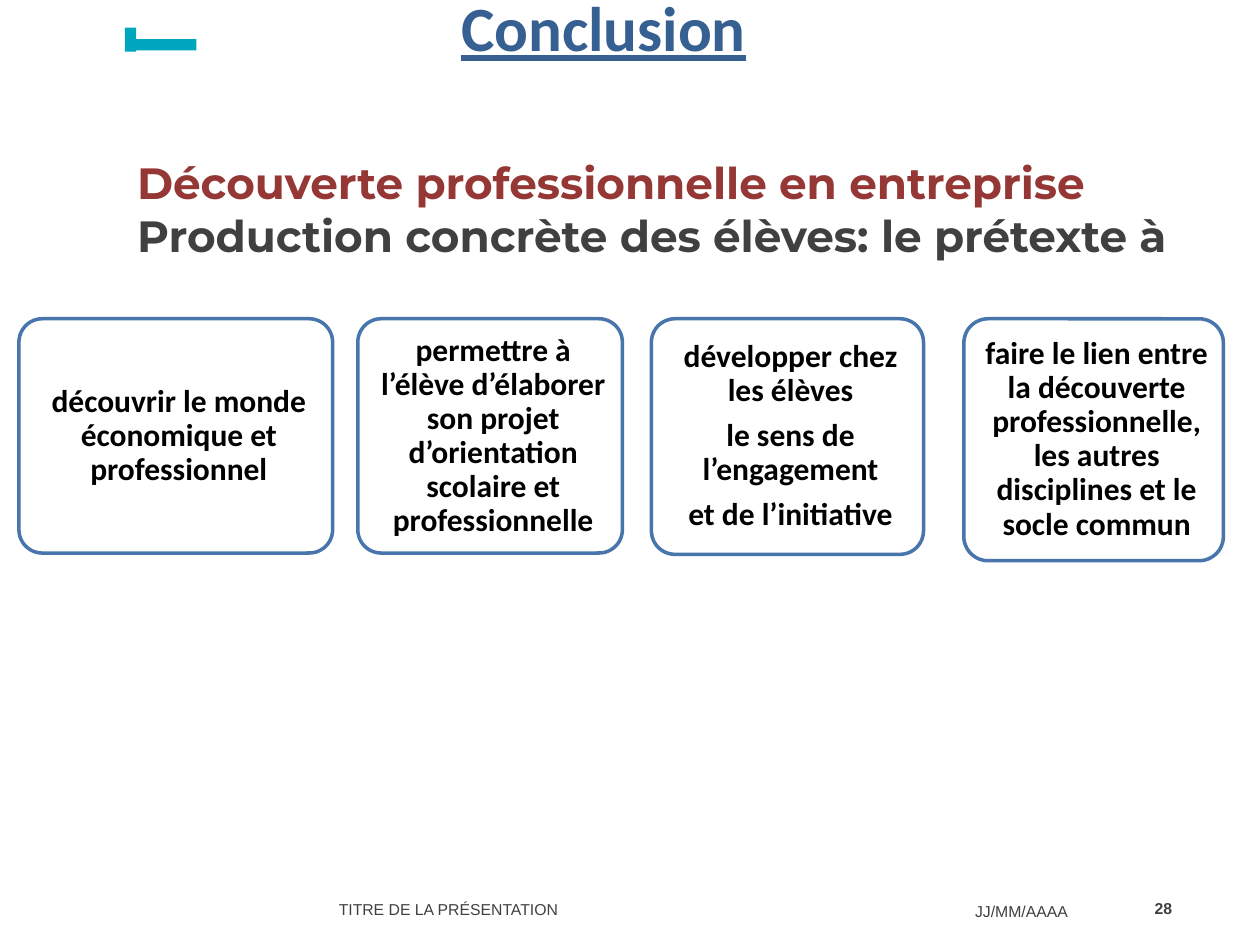
from pptx import Presentation
from pptx.dml.color import RGBColor
from pptx.enum.shapes import MSO_SHAPE
from pptx.enum.text import MSO_ANCHOR, PP_ALIGN
from pptx.util import Inches, Pt

RECTANGLE, ROUNDED = MSO_SHAPE.RECTANGLE, MSO_SHAPE.ROUNDED_RECTANGLE
TOP, MIDDLE = MSO_ANCHOR.TOP, MSO_ANCHOR.MIDDLE
LEFT, CENTER, RIGHT = PP_ALIGN.LEFT, PP_ALIGN.CENTER, PP_ALIGN.RIGHT

WHITE = RGBColor(0xFF, 0xFF, 0xFF)
BLACK = RGBColor(0x00, 0x00, 0x00)
GREY = RGBColor(0x40, 0x40, 0x40)
RED = RGBColor(0x95, 0x37, 0x35)
TEAL = RGBColor(0x00, 0xA6, 0xBE)
BORDER_BLUE = RGBColor(0x48, 0x75, 0xAC)
TITLE_BLUE = RGBColor(0x37, 0x60, 0x92)

COLUMNS, ROWS = 100, 75
CARD_ROW = 25.3
CARDS = [
    (1.5, 24.9, 18.6, ["découvrir le monde économique et professionnel"]),
    (28.4, 21, 18.6, ["permettre à l’élève d’élaborer son projet d’orientation "
                      "scolaire et professionnelle"]),
    (51.7, 21.6, 18.7, ["développer chez les élèves", "le sens de l’engagement",
                        "et de l’initiative"]),
    (76.5, 20.6, 19.2, ["faire le lien entre la découverte professionnelle, "
                        "les autres disciplines et le socle commun"]),
]


class ConclusionSlide:
    """Draws styled elements on a slide divided into a grid of columns and rows."""

    def __init__(self, presentation):
        self.column = presentation.slide_width / COLUMNS
        self.row = presentation.slide_height / ROWS
        self.slide = presentation.slides.add_slide(presentation.slide_layouts[6])

    def place(self, left, top, width, height):
        return (round(left * self.column), round(top * self.row),
                round(width * self.column), round(height * self.row))

    def style(self, paragraph, font, size, color, bold=False, align=LEFT):
        paragraph.alignment = align
        paragraph.font.name = font
        paragraph.font.size = Pt(size)
        paragraph.font.bold = bold
        paragraph.font.color.rgb = color

    def label(self, area, words, font, size, color, bold=False, align=LEFT,
              anchor=MIDDLE, inset_top=0.05):
        frame = self.slide.shapes.add_textbox(*self.place(*area)).text_frame
        frame.word_wrap = True
        frame.vertical_anchor = anchor
        frame.margin_top = Inches(inset_top)
        paragraph = frame.paragraphs[0]
        paragraph.text = words
        self.style(paragraph, font, size, color, bold, align)
        return paragraph

    def footer(self, area, words, bold=False, align=LEFT, inset_top=0.05):
        paragraph = self.label(area, words, "Arial", 9, GREY, bold, align,
                               inset_top=inset_top)
        paragraph.line_spacing = Pt(13.2)

    def shape(self, kind, area, fill):
        shape = self.slide.shapes.add_shape(kind, *self.place(*area))
        shape.shadow.inherit = False
        shape.fill.solid()
        shape.fill.fore_color.rgb = fill
        return shape

    def bar(self, *area):
        self.shape(RECTANGLE, area, TEAL).line.fill.background()

    def card(self, left, width, height, sentences):
        card = self.shape(ROUNDED, (left, CARD_ROW, width, height), WHITE)
        card.adjustments[0] = 0.1
        card.line.color.rgb = BORDER_BLUE
        card.line.width = Pt(2)
        frame = card.text_frame
        frame.word_wrap = True
        frame.vertical_anchor = MIDDLE
        frame.margin_left, frame.margin_right = Inches(0.09), Inches(0.04)
        frame.margin_top = frame.margin_bottom = Inches(0.08)
        frame.text = "\n".join(sentences)
        for paragraph in frame.paragraphs:
            self.style(paragraph, "Calibri", 18, BLACK, True, CENTER)
            paragraph.line_spacing = 0.9
            paragraph.space_after = Pt(6.3)


def main():
    presentation = Presentation()
    presentation.slide_width, presentation.slide_height = Inches(10), Inches(7.5)
    page = ConclusionSlide(presentation)

    page.footer((25.9, 67.2, 38.8, 7.4), "TITRE DE LA PRÉSENTATION", inset_top=0.27)
    page.footer((76.4, 69.9, 12.7, 4), "JJ/MM/AAAA", inset_top=0.1)
    page.footer((89.1, 69.9, 4.9, 4), "28", bold=True, align=RIGHT)

    heading = page.label((9.9, 13.3, 86.2, 6.5),
                         "Découverte professionnelle en entreprise\v"
                         "Production concrète des élèves: le prétexte à",
                         "Montserrat", 25, GREY, bold=True)
    heading.runs[0].font.color.rgb = RED

    page.bar(9.9, 2.2, 0.9, 1.9)
    page.bar(10.3, 3.1, 5.3, 0.9)
    for card in CARDS:
        page.card(*card)

    title = page.label((13, -1.4, 69.8, 7), "Conclusion", "Calibri", 36,
                       TITLE_BLUE, bold=True, align=CENTER, anchor=TOP)
    title.font.underline = True

    presentation.save("out.pptx")


if __name__ == "__main__":
    main()
